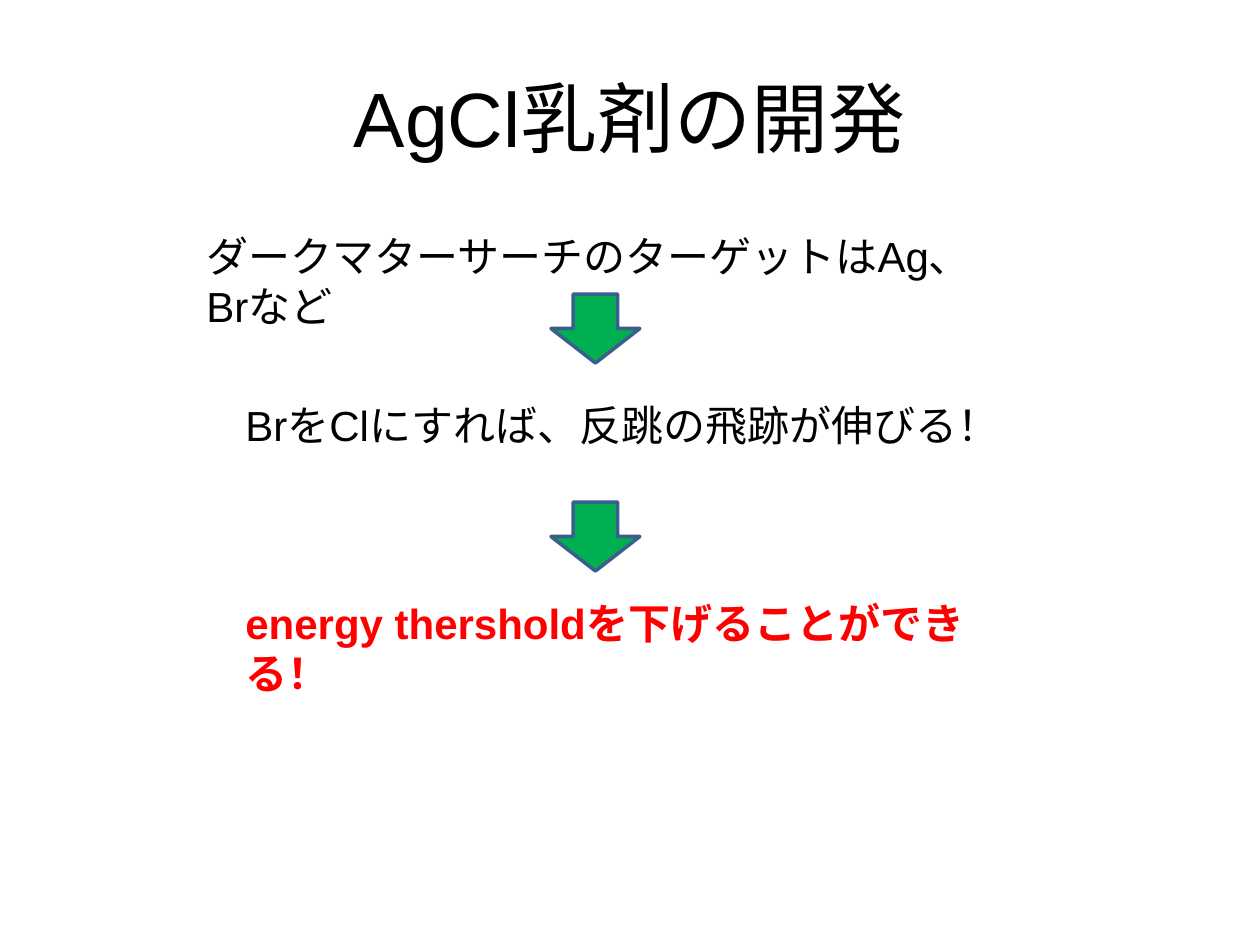
from dataclasses import dataclass

from pptx import Presentation
from pptx.dml.color import RGBColor
from pptx.enum.shapes import MSO_SHAPE
from pptx.enum.text import MSO_ANCHOR, PP_ALIGN
from pptx.util import Emu, Pt

# Content: steps as (text, left, top, width, highlighted), in px
TITLE = "AgCl乳剤の開発"
STEPS = [
    ("ダークマターサーチのターゲットはAg、Brなど", 194, 224, 829, False),
    ("BrをClにすれば、反跳の飛跡が伸びる！", 233, 393, 755, False),
    ("energy thersholdを下げることができる！", 233, 591, 745, True),
]
STEP_HEIGHT = 63
ARROW_LEFT, ARROW_WIDTH, ARROW_HEIGHT = 551, 89, 69
ARROW_TOPS = [294, 502]


@dataclass(frozen=True)
class Theme:
    font: str = "Arial"
    title_size: int = 44
    step_size: int = 24
    line_width: int = 2
    text: RGBColor = RGBColor(0, 0, 0)
    highlight: RGBColor = RGBColor(255, 0, 0)
    arrow: RGBColor = RGBColor(0, 176, 80)
    outline: RGBColor = RGBColor(58, 95, 140)


THEME = Theme()


def px(*lengths):
    return [Emu(round(length * 914400 / 126)) for length in lengths]


def write(frame, text, size, color, bold=False):
    frame.text = text
    frame.word_wrap = True
    font = frame.paragraphs[0].runs[0].font
    font.name, font.size, font.bold = THEME.font, Pt(size), bold
    font.color.rgb = color


def add_title(page):
    title = page.shapes.title
    title.left, title.top, title.width, title.height = px(63, 38, 1134, 157)
    write(title.text_frame, TITLE, THEME.title_size, THEME.text)
    title.text_frame.vertical_anchor = MSO_ANCHOR.MIDDLE
    title.text_frame.paragraphs[0].alignment = PP_ALIGN.CENTER


def add_step(page, text, left, top, width, highlighted):
    box = page.shapes.add_textbox(*px(left, top, width, STEP_HEIGHT))
    color = THEME.highlight if highlighted else THEME.text
    write(box.text_frame, text, THEME.step_size, color, highlighted)


def add_arrow(page, top):
    arrow = page.shapes.add_shape(
        MSO_SHAPE.DOWN_ARROW, *px(ARROW_LEFT, top, ARROW_WIDTH, ARROW_HEIGHT))
    arrow.shadow.inherit = False
    arrow.fill.solid()
    arrow.fill.fore_color.rgb = THEME.arrow
    arrow.line.color.rgb = THEME.outline
    arrow.line.width = Pt(THEME.line_width)


def main():
    deck = Presentation()
    deck.slide_width, deck.slide_height = px(1260, 945)
    page = deck.slides.add_slide(deck.slide_layouts[5])
    add_title(page)
    # Steps of the argument, then the arrows between them
    for step in STEPS:
        add_step(page, *step)
    for top in ARROW_TOPS:
        add_arrow(page, top)
    deck.save("out.pptx")


if __name__ == "__main__":
    main()
